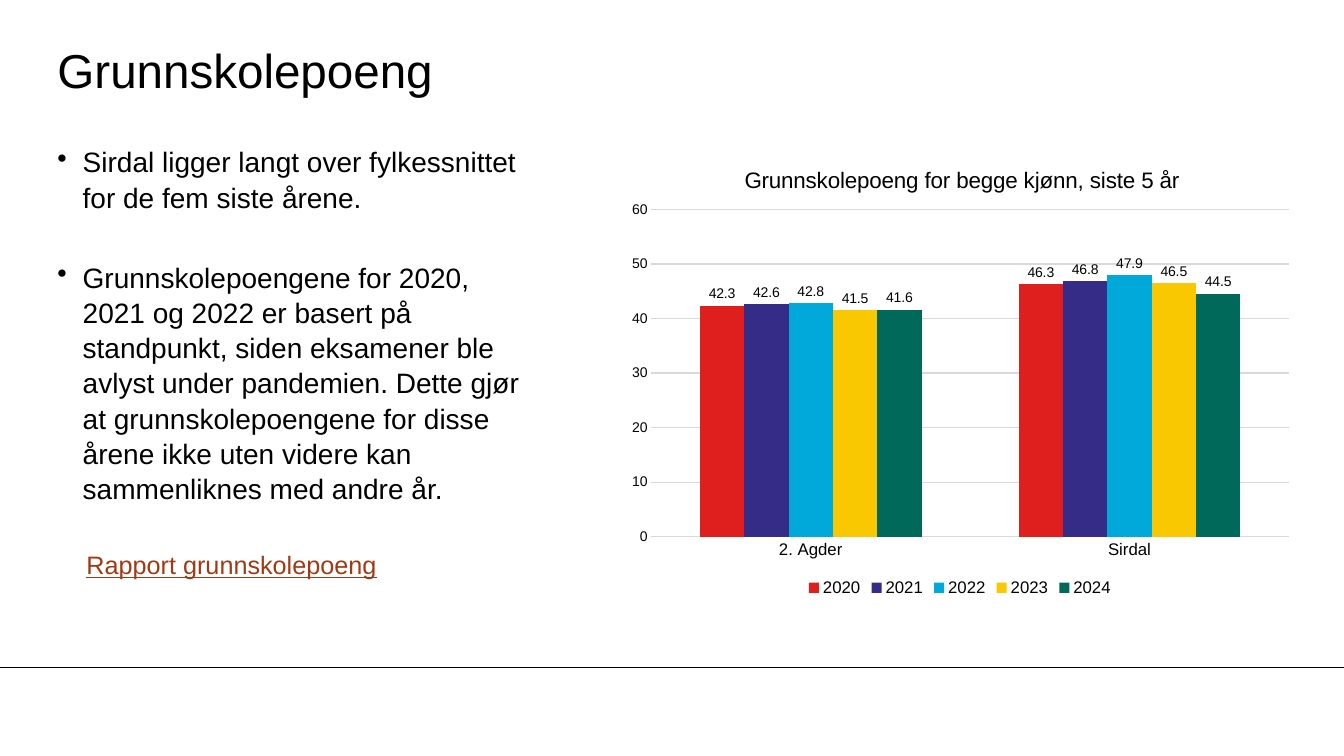
from typing import NamedTuple

from lxml import etree
from pptx import Presentation
from pptx.chart.data import CategoryChartData
from pptx.dml.color import RGBColor
from pptx.enum import chart as ce, text as te
from pptx.oxml import parse_xml
from pptx.oxml.ns import nsdecls, qn
from pptx.util import Inches, Pt

FONT = "Arial"
COLORS = {"text": "000000", "link": "9F3A14", "grid": "D9D9D9", "background": "FFFFFF"}


class YearScores(NamedTuple):
    year: str
    agder: float
    sirdal: float
    color: str


SCORES = [
    YearScores("2020", 42.3, 46.3, "DF1F1D"),
    YearScores("2021", 42.6, 46.8, "342C86"),
    YearScores("2022", 42.8, 47.9, "00A9DA"),
    YearScores("2023", 41.5, 46.5, "FAC800"),
    YearScores("2024", 41.6, 44.5, "00695A"),
]

FINDINGS = [
    "Sirdal ligger langt over fylkessnittet for de fem siste årene.",
    "Grunnskolepoengene for 2020, 2021 og 2022 er basert på standpunkt, siden "
    "eksamener ble avlyst under pandemien. Dette gjør at grunnskolepoengene for disse "
    "årene ikke uten videre kan sammenliknes med andre år.",
]


def rgb(name: str) -> RGBColor:
    return RGBColor.from_string(COLORS[name])


def style_font(font, size: float, color: str = "text") -> None:
    font.name, font.size, font.bold = FONT, Pt(size), False
    font.color.rgb = rgb(color)


def style_line(line, color: str) -> None:
    line.color.rgb, line.width = rgb(color), Pt(0.75)


def clear_margins(frame) -> None:
    frame.margin_left = frame.margin_top = frame.margin_right = frame.margin_bottom = 0


def add_bullet(paragraph) -> None:
    properties = paragraph._p.get_or_add_pPr()
    properties.set("marL", str(Inches(0.25)))
    properties.set("indent", str(Inches(-0.25)))
    properties.append(parse_xml(f'<a:buChar {nsdecls("a")} char="•"/>'))


def set_layout(element, index: int, **settings: object) -> None:
    """Place a chart part by fractions of the chart area."""
    for old in element.findall(qn("c:layout")):
        element.remove(old)
    layout = etree.Element(qn("c:layout"))
    manual = etree.SubElement(layout, qn("c:manualLayout"))
    for name, value in settings.items():
        etree.SubElement(manual, qn(f"c:{name}")).set("val", str(value))
    element.insert(index, layout)


def add_title(slide) -> None:
    title = slide.shapes.title
    title.left, title.top = Inches(0.57), Inches(0.31)
    title.width, title.height = Inches(11.1), Inches(0.75)
    frame = title.text_frame
    frame.text = "Grunnskolepoeng"
    clear_margins(frame)
    frame.vertical_anchor = te.MSO_ANCHOR.MIDDLE
    frame.paragraphs[0].alignment = te.PP_ALIGN.LEFT
    style_font(frame.paragraphs[0].font, 34)


def add_findings(slide) -> None:
    frame = slide.shapes.add_textbox(
        Inches(0.57), Inches(1.42), Inches(4.72), Inches(3.67)).text_frame
    frame.word_wrap = True
    clear_margins(frame)
    for number, finding in enumerate(FINDINGS):
        paragraph = frame.add_paragraph() if number else frame.paragraphs[0]
        paragraph.text = finding
        paragraph.line_spacing = 1.05
        if number:
            paragraph.space_before = Pt(32)
        add_bullet(paragraph)
        style_font(paragraph.font, 20)


def add_report_link(slide) -> None:
    frame = slide.shapes.add_textbox(
        Inches(0.76), Inches(5.4), Inches(3.3), Inches(0.4)).text_frame
    frame.word_wrap = True
    report = frame.paragraphs[0]
    report.text = "Rapport grunnskolepoeng"
    style_font(report.font, 18, "link")
    report.font.underline = True


def add_score_chart(slide) -> None:
    data = CategoryChartData(number_format="0.0")
    data.categories = ["2. Agder", "Sirdal"]
    for scores in SCORES:
        data.add_series(scores.year, (scores.agder, scores.sirdal))
    chart = slide.shapes.add_chart(
        ce.XL_CHART_TYPE.COLUMN_CLUSTERED,
        Inches(6.12), Inches(1.42), Inches(6.8), Inches(4.54), data).chart
    style_font(chart.font, 10)

    heading = chart.chart_title
    heading.text_frame.text = "Grunnskolepoeng for begge kjønn, siste 5 år"
    style_font(heading.text_frame.paragraphs[0].font, 16)
    heading.include_in_layout = False
    set_layout(heading._element, 1, xMode="edge", yMode="edge", x=0.18, y=0.04)

    chart.has_legend = True
    chart.legend.position = ce.XL_LEGEND_POSITION.BOTTOM
    chart.legend.include_in_layout = False
    style_font(chart.legend.font, 12)

    for axis, size in ((chart.category_axis, 12), (chart.value_axis, 10)):
        axis.major_tick_mark = axis.minor_tick_mark = ce.XL_TICK_MARK.NONE
        style_font(axis.tick_labels.font, size)
    style_line(chart.category_axis.format.line, "grid")
    values = chart.value_axis
    values.minimum_scale, values.maximum_scale, values.major_unit = 0, 60, 10
    values.tick_labels.number_format = "0"
    values.tick_labels.number_format_is_linked = False
    values.format.line.fill.background()
    style_line(values.major_gridlines.format.line, "grid")

    plot = chart.plots[0]
    plot.gap_width, plot.overlap, plot.vary_by_categories = 219, 0, False
    for series, scores in zip(plot.series, SCORES):
        series.format.fill.solid()
        series.format.fill.fore_color.rgb = RGBColor.from_string(scores.color)
        labels = series.data_labels
        labels.show_value = True
        labels.position = ce.XL_LABEL_POSITION.OUTSIDE_END
        style_font(labels.font, 10)
    set_layout(chart._chartSpace.chart.plotArea, 0, layoutTarget="inner",
               xMode="edge", yMode="edge", x=0.05, y=0.145, w=0.93, h=0.715)


def add_footer_rule(slide, width: int) -> None:
    rule = slide.shapes.add_connector(1, 0, Inches(6.62), width, Inches(6.62))
    style_line(rule.line, "text")
    etree.SubElement(rule._element.spPr, qn("a:effectLst"))


def main() -> None:
    deck = Presentation()
    deck.slide_width, deck.slide_height = Inches(13.33), Inches(7.5)
    slide = deck.slides.add_slide(deck.slide_layouts[5])
    slide.background.fill.solid()
    slide.background.fill.fore_color.rgb = rgb("background")
    add_footer_rule(slide, deck.slide_width)
    add_title(slide)
    add_findings(slide)
    add_report_link(slide)
    add_score_chart(slide)
    deck.save("out.pptx")


if __name__ == "__main__":
    main()
